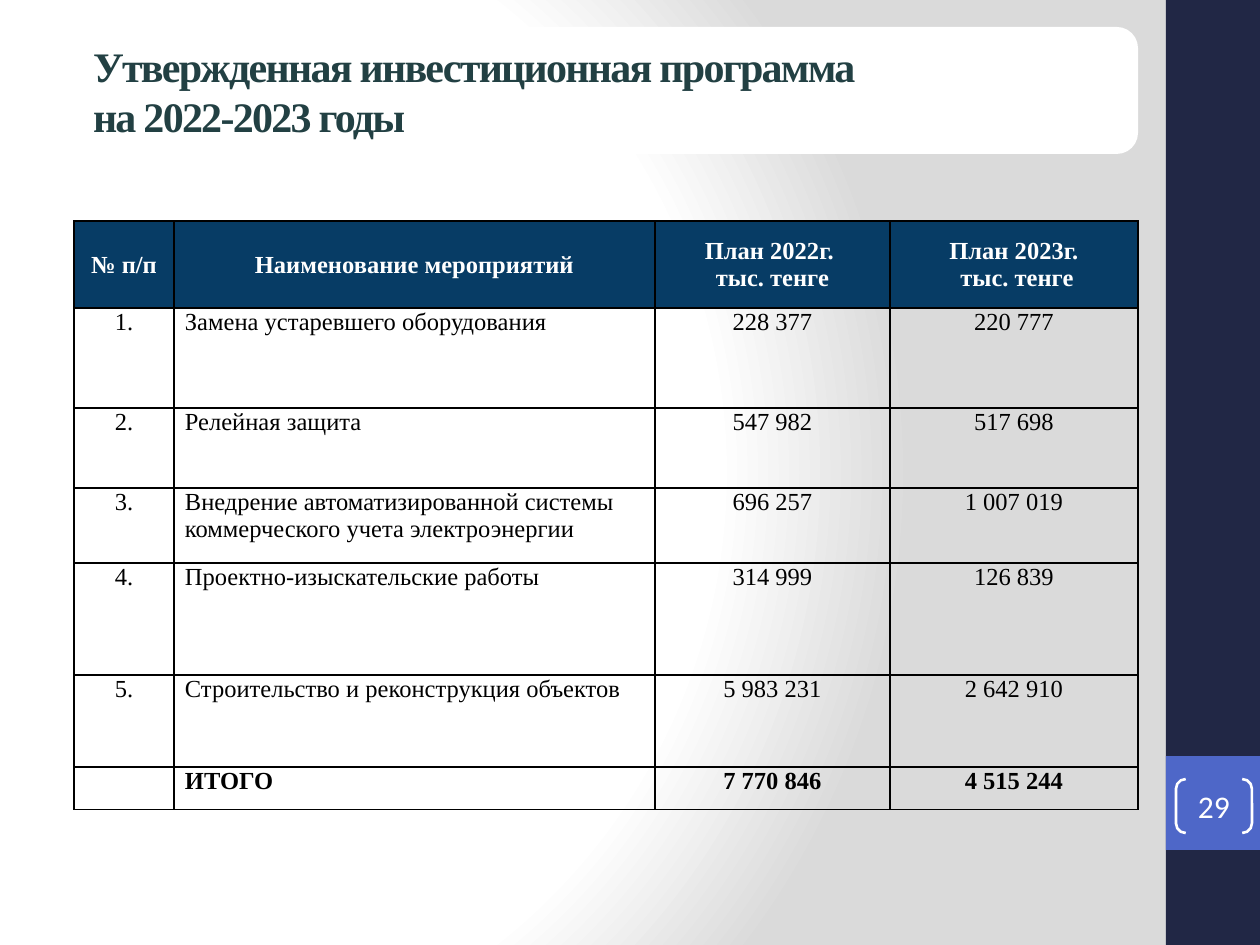
from dataclasses import dataclass
from itertools import product

from lxml import etree
from pptx import Presentation
from pptx.dml.color import RGBColor
from pptx.enum.shapes import MSO_SHAPE
from pptx.enum.text import MSO_ANCHOR, MSO_AUTO_SIZE, PP_ALIGN
from pptx.oxml import parse_xml
from pptx.oxml.ns import nsdecls
from pptx.util import Emu, Pt


@dataclass(frozen=True)
class Theme:
    white: str = "FFFFFF"
    shade: str = "DADADA"
    black: str = "000000"
    sidebar: str = "212745"
    accent: str = "4E67C8"
    title: str = "224043"
    header: str = "073C65"
    serif: str = "Times New Roman"
    sans: str = "Calibri"
    title_size: int = 24
    number_size: int = 18
    table_size: int = 14
    rule: float = 1


THEME = Theme()
TITLE_LINES = ["Утвержденная инвестиционная программа", "на 2022-2023 годы"]
PROGRAMME = [
    ["№ п/п", "Наименование мероприятий", "План 2022г. \nтыс. тенге", "План 2023г.\n тыс. тенге"],
    ["1.", "Замена устаревшего оборудования", "228 377", "220 777"],
    ["2.", "Релейная защита", "547 982", "517 698"],
    ["3.", "Внедрение автоматизированной системы коммерческого учета электроэнергии",
     "696 257", "1 007 019"],
    ["4.", "Проектно-изыскательские работы", "314 999", "126 839"],
    ["5.", "Строительство и реконструкция объектов", "5 983 231", "2 642 910"],
    ["", "ИТОГО", "7 770 846", "4 515 244"],
]
COLUMN_WIDTHS = [100, 481, 235, 248]
ROW_HEIGHTS = [87, 100, 80, 75, 112, 92, 43]
NAME_COLUMN = 1


def px(length):
    return Emu(round(length * 914400 / 126))


def rgb(colour):
    return RGBColor.from_string(colour)


def style(paragraph, face, size, colour, bold=False, align=PP_ALIGN.CENTER):
    paragraph.alignment = align
    font = paragraph.font
    font.name, font.size, font.bold = face, Pt(size), bold
    font.color.rgb = rgb(colour)


def set_margins(target, left, top, right, bottom):
    target.margin_left, target.margin_top = px(left), px(top)
    target.margin_right, target.margin_bottom = px(right), px(bottom)


def add_plain_shape(slide, kind, box, fill=None):
    shape = slide.shapes.add_shape(kind, *map(px, box))
    shape.shadow.inherit = False
    shape.line.fill.background()
    if fill:
        shape.fill.solid()
        shape.fill.fore_color.rgb = rgb(fill)
    else:
        shape.fill.background()
    return shape


def paint_background(slide):
    """Radial gradient, white on the left and grey on the right."""
    slide.background.fill.solid()
    solid = slide._element.xpath("./p:cSld/p:bg/p:bgPr/a:solidFill")[0]
    stops = "".join(
        f'<a:gs pos="{position}"><a:srgbClr val="{colour}"/></a:gs>'
        for position, colour in [(0, THEME.white), (75000, THEME.white), (100000, THEME.shade)]
    )
    solid.getparent().replace(solid, parse_xml(
        f'<a:gradFill {nsdecls("a")} rotWithShape="1"><a:gsLst>{stops}</a:gsLst>'
        '<a:path path="circle"><a:fillToRect l="20000" t="50000" r="100000" b="50000"/>'
        '</a:path></a:gradFill>'))


def build_sidebar(slide, left, top, width, height):
    add_plain_shape(slide, MSO_SHAPE.RECTANGLE, (left, top, width, height), THEME.sidebar)
    badge_top = top + 756
    add_plain_shape(slide, MSO_SHAPE.RECTANGLE, (left, badge_top, width, width), THEME.accent)
    brackets = add_plain_shape(
        slide, MSO_SHAPE.DOUBLE_BRACKET, (left + 10, badge_top + 23, 76, 54))
    brackets.adjustments[0] = 0.18
    brackets.line.color.rgb = rgb(THEME.white)
    brackets.line.width = Pt(1.5)
    frame = brackets.text_frame
    frame.vertical_anchor = MSO_ANCHOR.MIDDLE
    set_margins(frame, 0, 0, 0, 0)
    frame.text = "29"
    style(frame.paragraphs[0], THEME.sans, THEME.number_size, THEME.white)


def build_title(slide, left, top, width, height):
    box = (left, top, width, height)
    add_plain_shape(slide, MSO_SHAPE.FLOWCHART_ALTERNATE_PROCESS, box, THEME.white)
    title = slide.shapes.title
    title.left, title.top, title.width, title.height = map(px, box)
    slide.shapes._spTree.append(title._element)  # in front of its panel
    frame = title.text_frame
    frame.word_wrap = True
    frame.auto_size = MSO_AUTO_SIZE.NONE
    frame.vertical_anchor = MSO_ANCHOR.MIDDLE
    set_margins(frame, 19, 6, 19, 6)
    frame.text = "\n".join(TITLE_LINES)
    for line in frame.paragraphs:
        style(line, THEME.serif, THEME.title_size, THEME.title, True, PP_ALIGN.LEFT)
        for run in line.runs:
            run.font._element.set("spc", "-100")


def outline_cell(cell):
    properties = cell._tc.get_or_add_tcPr()
    for index, side in enumerate("LRTB"):
        properties.insert(index, parse_xml(
            f'<a:ln{side} {nsdecls("a")} w="{Pt(THEME.rule)}"><a:solidFill>'
            f'<a:srgbClr val="{THEME.black}"/></a:solidFill></a:ln{side}>'))


def fill_cell(cell, text, is_header, is_total, is_name):
    cell.text = text
    cell.vertical_anchor = MSO_ANCHOR.MIDDLE if is_header else MSO_ANCHOR.TOP
    left_aligned = is_name and not is_header
    set_margins(cell, 11 if left_aligned else 1, 1, 1, 0)
    if is_header:
        cell.fill.solid()
        cell.fill.fore_color.rgb = rgb(THEME.header)
    else:
        cell.fill.background()
    outline_cell(cell)
    for paragraph in cell.text_frame.paragraphs:
        style(paragraph, THEME.serif, THEME.table_size,
              THEME.white if is_header else THEME.black, is_header or is_total,
              PP_ALIGN.LEFT if left_aligned else PP_ALIGN.CENTER)


def build_programme_table(slide, left, top):
    rows, columns = len(ROW_HEIGHTS), len(COLUMN_WIDTHS)
    table = slide.shapes.add_table(
        rows, columns, px(left), px(top), px(sum(COLUMN_WIDTHS)), px(sum(ROW_HEIGHTS))).table
    table.first_row = table.horz_banding = False
    for column, width in zip(table.columns, COLUMN_WIDTHS):
        column.width = px(width)
    for row, height in zip(table.rows, ROW_HEIGHTS):
        row.height = px(height)
    for row, column in product(range(rows), range(columns)):
        fill_cell(table.cell(row, column), PROGRAMME[row][column],
                  row == 0, row == rows - 1, column == NAME_COLUMN)


def main():
    presentation = Presentation()
    presentation.slide_width, presentation.slide_height = px(1260), px(945)
    slide = presentation.slides.add_slide(presentation.slide_layouts[5])
    paint_background(slide)
    build_sidebar(slide, 1166, 0, 94, 945)
    build_title(slide, 74, 27, 1064, 127)
    build_programme_table(slide, 74, 221)
    presentation.save("out.pptx")


if __name__ == "__main__":
    main()
